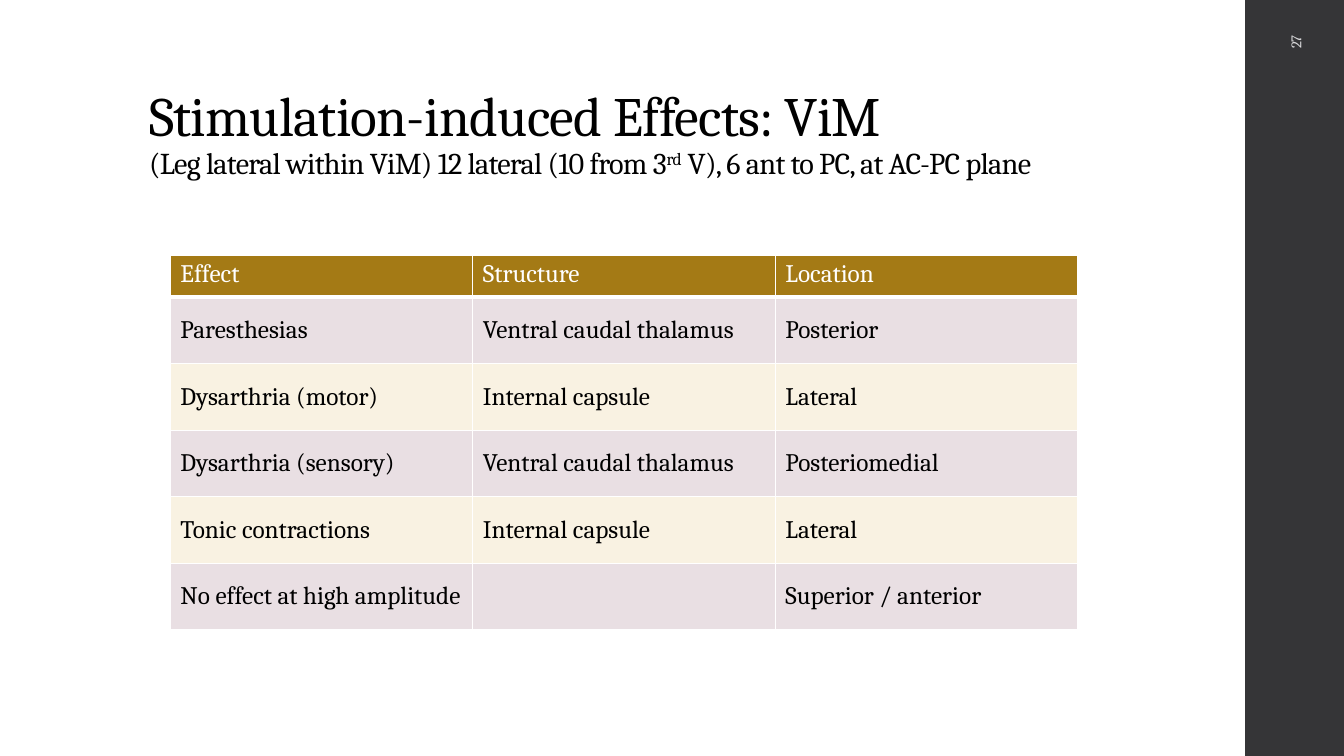
"""Build the slide on stimulation-induced effects around the ViM target."""
from lxml import etree
from pptx import Presentation
from pptx.dml.color import RGBColor
from pptx.enum.shapes import MSO_SHAPE
from pptx.enum.text import MSO_ANCHOR, PP_ALIGN
from pptx.oxml.ns import qn
from pptx.util import Inches, Pt

TITLE = "Stimulation-induced Effects: ViM"
SUBTITLE = [
    ("(Leg lateral within ViM) 12 lateral (10 from 3", None),
    ("rd", "30000"),
    (" V), 6 ant to PC, at AC-PC plane", None),
]
PAGE = "27"
ROWS = [
    ("Effect", "Structure", "Location"),
    ("Paresthesias", "Ventral caudal thalamus", "Posterior"),
    ("Dysarthria (motor)", "Internal capsule", "Lateral"),
    ("Dysarthria (sensory)", "Ventral caudal thalamus", "Posteriomedial"),
    ("Tonic contractions", "Internal capsule", "Lateral"),
    ("No effect at high amplitude", "", "Superior / anterior"),
]

FONT = "Cambria"
BLACK = RGBColor(0x00, 0x00, 0x00)
WHITE = RGBColor(0xFF, 0xFF, 0xFF)
CHARCOAL = RGBColor(0x35, 0x35, 0x37)
PALE_GREY = RGBColor(0xD9, 0xD9, 0xDB)
GOLD = RGBColor(0xA4, 0x7A, 0x15)
BANDS = (RGBColor(0xF9, 0xF2, 0xE2), RGBColor(0xE9, 0xDF, 0xE3))
RECTANGLE = MSO_SHAPE.RECTANGLE
TOP, MIDDLE, BOTTOM = MSO_ANCHOR.TOP, MSO_ANCHOR.MIDDLE, MSO_ANCHOR.BOTTOM
RIGHT = PP_ALIGN.RIGHT

COL_W, HEADER_H, ROW_H = 3, 0.42, 0.68 - 0.02


def style(r, size, color):
    r.font.name = FONT
    r.font.size = Pt(size)
    r.font.color.rgb = color
    r.font.bold = False


def add_text_box(s, left, top, width, height, anchor):
    sp = s.shapes.add_textbox(Inches(left), Inches(top), Inches(width), Inches(height))
    sp.text_frame.word_wrap = True
    sp.text_frame.vertical_anchor = anchor
    return sp


def add_sidebar(s):
    sp = s.shapes.add_shape(RECTANGLE, Inches(12.35), 0, Inches(1), Inches(7.5))
    sp.shadow.inherit = False
    sp.fill.solid()
    sp.fill.fore_color.rgb = CHARCOAL
    sp.line.fill.background()


def add_title(s):
    p = add_text_box(s, 1.38, 0.4, 10.6, 1.45, BOTTOM).text_frame.paragraphs[0]
    p.line_spacing = 0.9
    p.text = TITLE
    style(p.runs[0], 39.6, BLACK)
    p.add_line_break()
    for text, baseline in SUBTITLE:
        r = p.add_run()
        r.text = text
        style(r, 21.6, BLACK)
        if baseline:
            r.font._element.set("baseline", baseline)
    for r in p.runs:
        r.font._element.set("spc", "-50")


def add_page_number(s):
    sp = add_text_box(s, 11.81, 1.09, 2.08, 0.4, MIDDLE)
    sp.rotation = 270
    p = sp.text_frame.paragraphs[0]
    p.text = PAGE
    p.alignment = RIGHT
    style(p.runs[0], 10.5, PALE_GREY)


def set_borders(cell, bottom_width):
    tcPr = cell._tc.get_or_add_tcPr()
    widths = {"a:lnL": 1, "a:lnR": 1, "a:lnT": 1, "a:lnB": bottom_width}
    for i, (tag, width) in enumerate(widths.items()):
        ln = etree.Element(qn(tag), w=str(Pt(width)))
        fill = etree.SubElement(ln, qn("a:solidFill"))
        etree.SubElement(fill, qn("a:srgbClr"), val=str(WHITE))
        tcPr.insert(i, ln)


def add_effects_table(s):
    n_rows, n_cols = len(ROWS), len(ROWS[0])
    height = HEADER_H + ROW_H * (n_rows - 1)
    table = s.shapes.add_table(n_rows, n_cols, Inches(1.69), Inches(2.53),
                               Inches(COL_W * n_cols), Inches(height)).table
    for col in table.columns:
        col.width = Inches(COL_W)
    for i, values in enumerate(ROWS):
        header = i == 0
        table.rows[i].height = Inches(HEADER_H if header else ROW_H)
        for j, value in enumerate(values):
            cell = table.cell(i, j)
            cell.text = value
            cell.vertical_anchor = TOP if header else MIDDLE
            cell.fill.solid()
            cell.fill.fore_color.rgb = GOLD if header else BANDS[i % 2]
            set_borders(cell, 3 if header else 1)
            for r in cell.text_frame.paragraphs[0].runs:
                style(r, 18, WHITE if header else BLACK)


def main():
    prs = Presentation()
    prs.slide_width, prs.slide_height = Inches(13.33), Inches(7.5)
    s = prs.slides.add_slide(prs.slide_layouts[6])
    add_sidebar(s)
    add_title(s)
    add_page_number(s)
    add_effects_table(s)
    prs.save("out.pptx")


if __name__ == "__main__":
    main()
